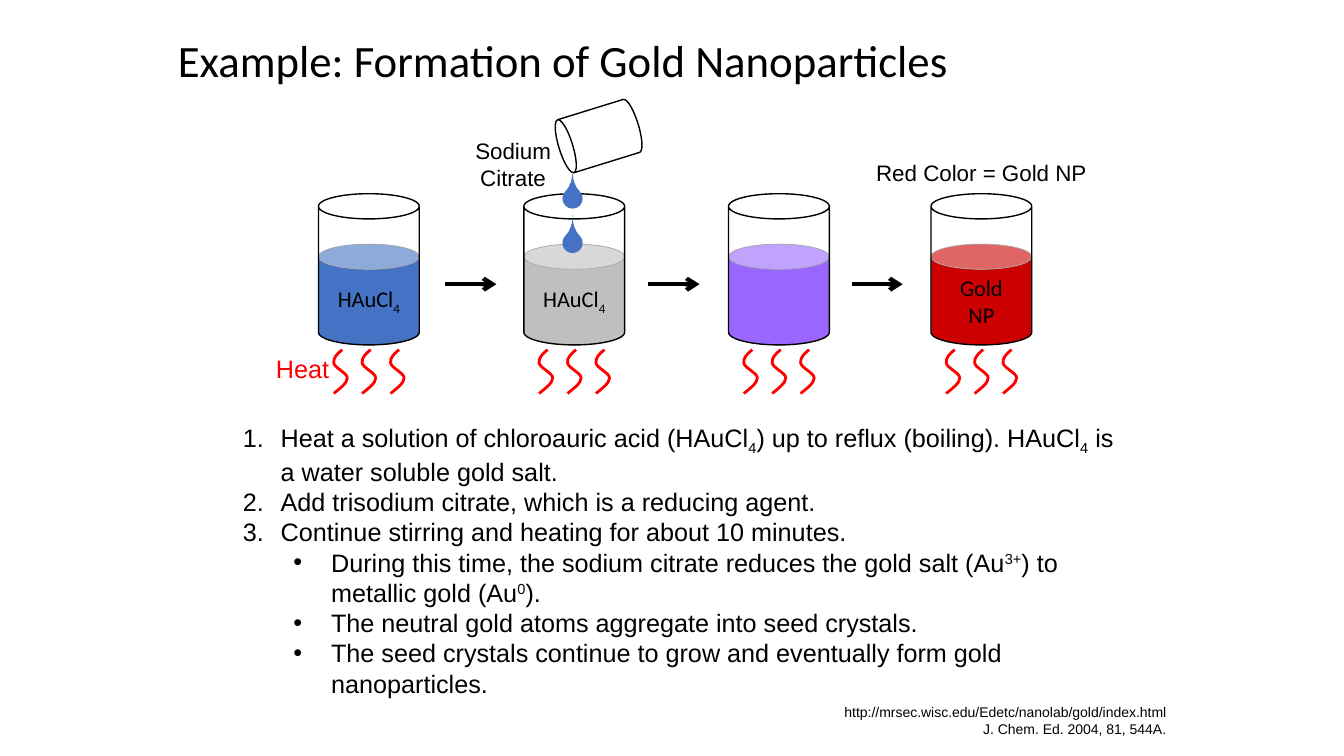
"""Build the slide on the formation of gold nanoparticles."""
from dataclasses import dataclass
from typing import Optional

from lxml.etree import SubElement as Sub
from pptx import Presentation
from pptx.dml.color import RGBColor as Rgb
from pptx.enum.shapes import MSO_CONNECTOR as Link, MSO_SHAPE as Kind
from pptx.enum.text import MSO_ANCHOR as Anchor, PP_ALIGN as Align
from pptx.oxml.ns import qn
from pptx.shapes.autoshape import Shape
from pptx.slide import Slide
from pptx.text.text import TextFrame as Frame
from pptx.util import Pt

BLACK, RED, BLUE = "000000", "FF0000", "4472C4"
SIDE, RIM, BASE = 72, 138.4, 246.4
WAVE = [(6.5, 0),
        (2.9, 2.9), (0, 5.8), (0.4, 9.4),
        (0.8, 13), (10.1, 16.6), (10.1, 20.2),
        (10.1, 23.8), (5.2, 27.4), (0.4, 31.3)]


@dataclass
class Row:
    """Hold a paragraph whose parts between tildes are raised or lowered."""
    text: str
    shift: int = 0
    mark: str = ""
    left: float = 0


@dataclass
class Glass:
    """Hold the place, colour and label of a beaker."""
    left: float
    tint: str
    rows: tuple[Row, ...] = ()


@dataclass
class Note:
    """Hold a free text with its box and format."""
    box: tuple[float, float, float, float]
    rows: tuple[Row, ...]
    size: float
    face: str = "Arial"
    tint: str = BLACK
    align: Align = Align.LEFT
    anchor: Anchor = Anchor.TOP
    wrap: bool = True
    space: Optional[float] = None


SALT = (Row("HAuCl~4~", -25),)
GLASSES = [
    Glass(227.5, BLUE, SALT),
    Glass(374.2, "BFBFBF", SALT),
    Glass(520.4, "9966FF"),
    Glass(665, "CC0000", (Row("Gold"), Row("NP"))),
]
STEPS = (
    Row("Heat a solution of chloroauric acid (HAuCl~4~) up to reflux (boiling). "
        "HAuCl~4~ is a water soluble gold salt.", -25, "1.", 27),
    Row("Add trisodium citrate, which is a reducing agent.", 0, "1.", 27),
    Row("Continue stirring and heating for about 10 minutes.", 0, "1.", 27),
    Row("During this time, the sodium citrate reduces the gold salt (Au~3+~) "
        "to metallic gold (Au~0~).", 30, "•", 63),
    Row("The neutral gold atoms aggregate into seed crystals.", 0, "•", 63),
    Row("The seed crystals continue to grow and eventually form gold "
        "nanoparticles.", 0, "•", 63),
)
NOTES = [
    Note((120, 0, 648, 90), (Row("Example: Formation of Gold Nanoparticles"),),
         32, "Calibri", anchor=Anchor.MIDDLE, space=0.9),
    Note((332, 94.6, 69.1, 46), (Row("Sodium"), Row("Citrate")),
         16, align=Align.CENTER, wrap=False),
    Note((190, 248.5, 53.3, 29), (Row("Heat"),), 18, tint=RED, wrap=False),
    Note((374, 499, 466, 31.5),
         (Row("http://mrsec.wisc.edu/Edetc/nanolab/gold/index.html"),
          Row("J. Chem. Ed. 2004, 81, 544A.")), 10, align=Align.RIGHT),
    Note((166.4, 297.8, 638, 204), STEPS, 18),
    Note((617.8, 110.5, 166.3, 26.6), (Row("Red Color = Gold NP"),),
         16, align=Align.CENTER, wrap=False),
]


def hue(code: str) -> Rgb:
    """Turn a hex string into a colour."""
    return Rgb.from_string(code)


def write(frame: Frame, rows: tuple[Row, ...], *, size: float, face: str,
          tint: str = BLACK, align: Align = Align.CENTER,
          anchor: Anchor = Anchor.MIDDLE, wrap: bool = True,
          space: Optional[float] = None) -> None:
    """Fill a frame with formatted paragraphs."""
    frame.word_wrap, frame.vertical_anchor = wrap, anchor
    for num, row in enumerate(rows):
        para = frame.add_paragraph() if num else frame.paragraphs[0]
        para.alignment = align
        if space:
            para.line_spacing = space
        if row.mark:
            bullet(para, row)
        for part, text in enumerate(row.text.split("~")):
            run = para.add_run()
            run.text = text
            run.font.size, run.font.name = Pt(size), face
            run.font.color.rgb = hue(tint)
            if part % 2:
                run.font._element.set("baseline", str(row.shift * 1000))


def bullet(para, row: Row) -> None:
    """Give a paragraph its number or dot and its hanging indent."""
    dot = row.mark == "•"
    para.level = int(dot)
    prop = para._p.get_or_add_pPr()
    prop.set("marL", str(Pt(row.left)))
    prop.set("indent", str(Pt(-27)))
    Sub(prop, qn("a:buFont")).set("typeface", "Arial")
    if dot:
        Sub(prop, qn("a:buChar")).set("char", row.mark)
    else:
        Sub(prop, qn("a:buAutoNum")).set("type", "arabicPeriod")


def paint(shape: Shape, fill: str = "", line: str = "", width: float = 1) -> None:
    """Set fill and line, and drop the shadow."""
    shape.shadow.inherit = False
    if fill:
        shape.fill.solid()
        shape.fill.fore_color.rgb = hue(fill)
    else:
        shape.fill.background()
    if line:
        shape.line.color.rgb = hue(line)
        shape.line.width = Pt(width)
    else:
        shape.line.fill.background()


def form(slide: Slide, kind: Kind, left: float, top: float, wide: float,
         high: float, turn: float = 0) -> Shape:
    """Add a preset shape, turned by some degrees."""
    shape = slide.shapes.add_shape(kind, Pt(left), Pt(top), Pt(wide), Pt(high))
    shape.rotation = turn
    return shape


def wave(slide: Slide, left: float, top: float) -> None:
    """Draw a heat wave as three Bezier curves."""
    start, *dots = [(Pt(left + x), Pt(top + y)) for x, y in WAVE]
    pen = slide.shapes.build_freeform(*start)
    pen.add_line_segments(dots, close=False)
    shape = pen.convert_to_shape()
    legs = list(shape._element.iter(qn("a:lnTo")))
    for k in range(0, len(legs), 3):
        curve = Sub(legs[k].getparent(), qn("a:cubicBezTo"))
        for leg in legs[k:k + 3]:
            curve.append(leg[0])
            leg.getparent().remove(leg)
    paint(shape, line=RED, width=2)


def beaker(slide: Slide, glass: Glass) -> None:
    """Draw a beaker with its liquid and the heat below."""
    fluid = form(slide, Kind.CAN, glass.left, BASE - SIDE, SIDE, SIDE)
    paint(fluid, glass.tint, "A6A6A6", 0.5)
    write(fluid.text_frame, glass.rows, size=16, face="Calibri")
    wall = form(slide, Kind.CAN, glass.left, RIM, SIDE, BASE - RIM)
    paint(wall, line=BLACK)
    for k in range(3):
        wave(slide, glass.left + 10.5 + 20.3 * k, BASE + 3.4)


def arrow(slide: Slide, left: float) -> None:
    """Draw an arrow from one beaker to the next."""
    y = Pt(203)
    line = slide.shapes.add_connector(Link.STRAIGHT, Pt(left), y, Pt(left + 36.5), y)
    line.line.color.rgb, line.line.width = hue(BLACK), Pt(3)
    Sub(line.line._get_or_add_ln(), qn("a:tailEnd")).set("type", "arrow")
    Sub(line._element.spPr, qn("a:effectLst"))


def main() -> None:
    """Draw the slide and save it."""
    deck = Presentation()
    deck.slide_width, deck.slide_height = Pt(960), Pt(540)
    slide = deck.slides.add_slide(deck.slide_layouts[6])
    for glass in GLASSES:
        beaker(slide, glass)
    paint(form(slide, Kind.CAN, 407.8, 67.7, 39.6, 59, 252.8), line=BLACK)
    for top in (134.6, 166.3):
        drop = form(slide, Kind.TEAR, 401.8, top, 14.4, 14.4, 315)
        drop.adjustments[0] = 2
        paint(drop, BLUE)
    for k in range(3):
        arrow(slide, 318.1 + 145.1 * k)
    for note in NOTES:
        box = slide.shapes.add_textbox(*map(Pt, note.box))
        write(box.text_frame, note.rows, size=note.size, face=note.face,
              tint=note.tint, align=note.align, anchor=note.anchor,
              wrap=note.wrap, space=note.space)
    deck.save("out.pptx")


if __name__ == "__main__":
    main()
